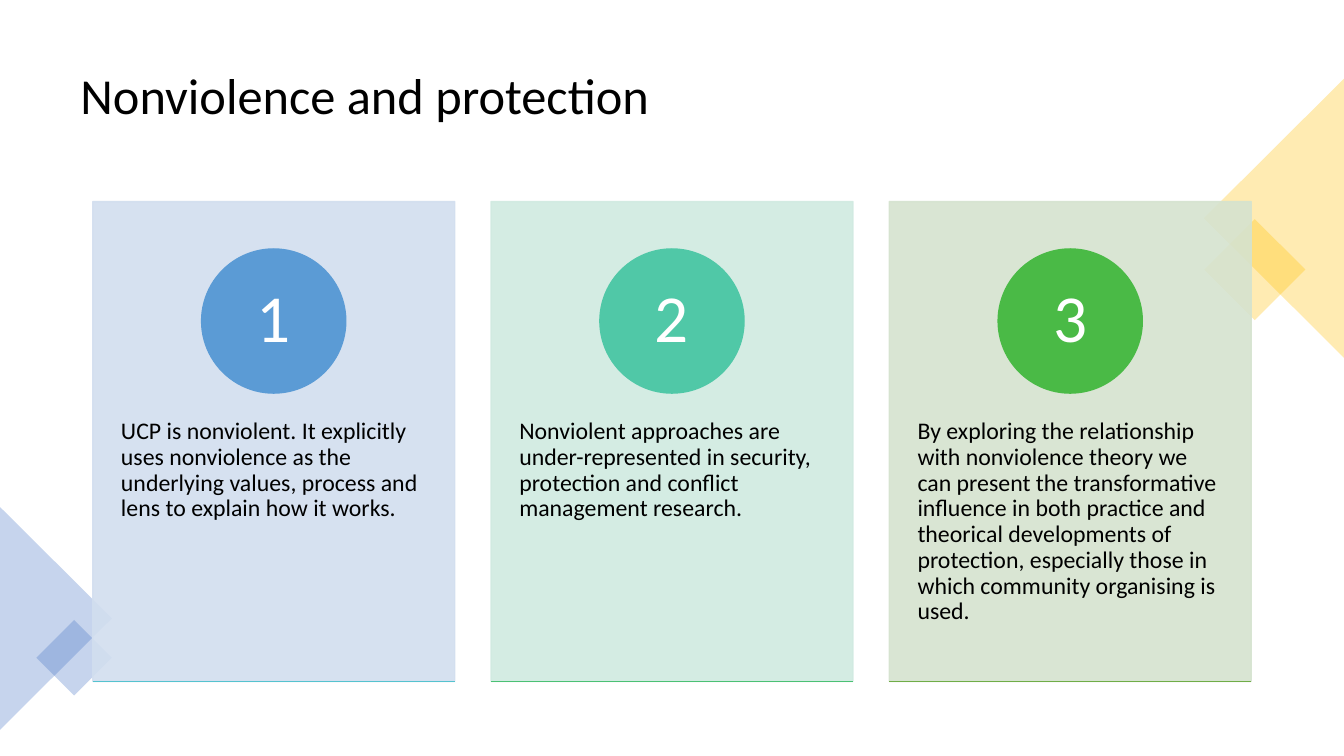
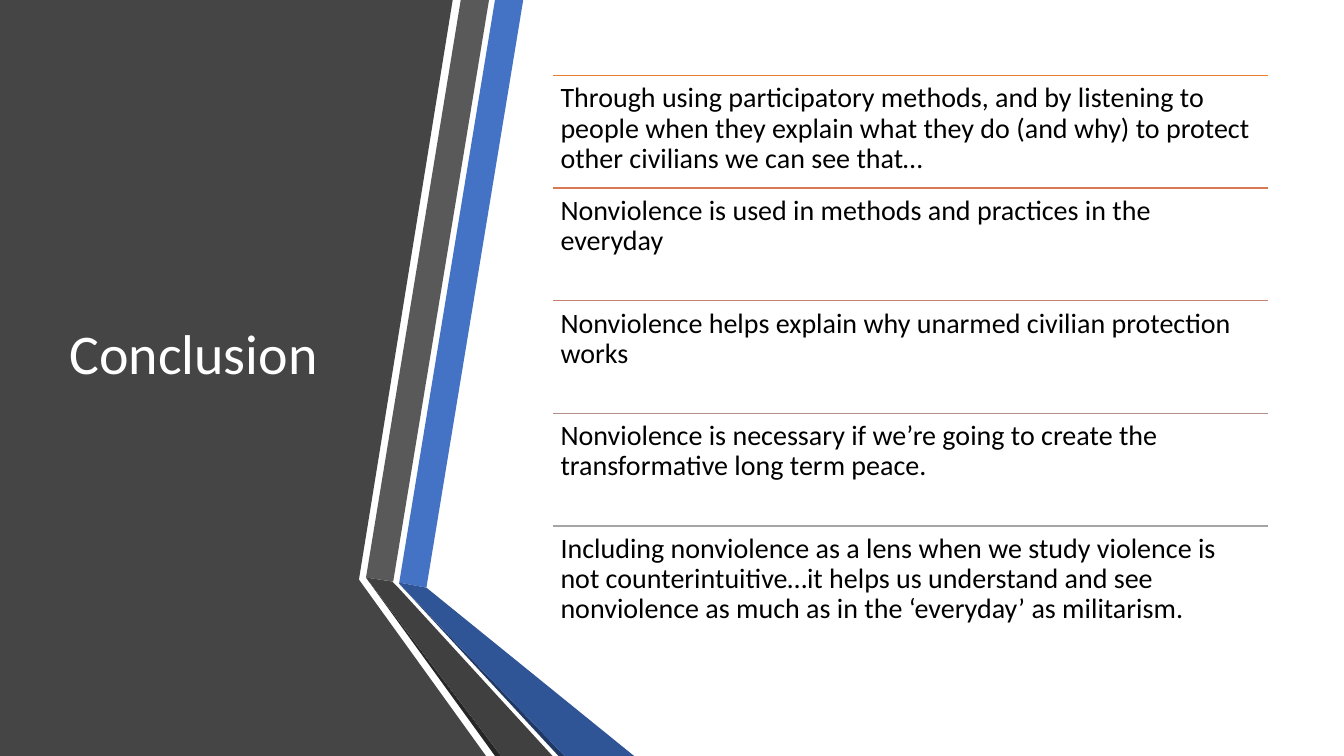
from typing import NamedTuple

from lxml import etree
from pptx import Presentation
from pptx.dml.color import RGBColor
from pptx.enum import shapes, text
from pptx.oxml.ns import qn
from pptx.util import Inches, Pt

# Shared style
FONT = "Calibri"
BLACK, WHITE = "000000", "FFFFFF"
BLUE, GOLD = "4472C4", "FFC000"
DIAMOND_OPACITY, CARD_OPACITY = 30, 90
SLIDE_WIDTH, SLIDE_HEIGHT = 13.33, 7.5
TITLE_INSETS = (0.1, 0.05)


class Accent(NamedTuple):
    kind: shapes.MSO_SHAPE
    left: float
    top: float
    width: float
    height: float
    rotation: int
    color: str


class Card(NamedTuple):
    background: str
    circle: str
    rule: str
    body: str


class Facet(NamedTuple):
    color: str
    points: list[tuple[float, float]]


class Statement(NamedTuple):
    rule: str
    body: str


# Content
ACCENTS = [
    Accent(shapes.MSO_SHAPE.RECTANGLE, 12.09, 2.32, 0.71, 0.71, 45, GOLD),
    Accent(shapes.MSO_SHAPE.ISOSCELES_TRIANGLE, 11.25, 1.47, 2.77, 1.39, 270, GOLD),
    Accent(shapes.MSO_SHAPE.ISOSCELES_TRIANGLE, -0.55, 5.58, 2.21, 1.11, 90, BLUE),
    Accent(shapes.MSO_SHAPE.RECTANGLE, 0.47, 6.26, 0.53, 0.53, 45, BLUE),
]

CARDS = [
    Card("D2DEEF", "5B9BD5", "55C3CF",
         "UCP is nonviolent. It explicitly uses nonviolence as the underlying "
         "values, process and lens to explain how it works."),
    Card("D0EAE1", "50C8A7", "4BC174",
         "Nonviolent approaches are under-represented in security, protection "
         "and conflict management research."),
    Card("D5E3CF", "4ABA46", "70AD47",
         "By exploring the relationship with nonviolence theory we can present "
         "the transformative influence in both practice and theorical "
         "developments of protection, especially those in which community "
         "organising is used."),
]

FACETS = [
    Facet("454545", [(0, 0), (4.49, 0), (3.56, 5.75), (4.82, 7.5), (0, 7.5)]),
    Facet(BLUE, [(3.96, 5.78), (4.23, 5.83), (5.19, 0), (4.91, 0)]),
    Facet("595959", [(4.85, 0), (4.57, 0), (3.63, 5.73), (3.9, 5.77)]),
    Facet("262626", [(3.63, 5.73), (4.91, 7.5), (4.97, 7.5)]),
    Facet("203864", [(3.96, 5.79), (5.54, 7.5), (5.6, 7.5)]),
    Facet("2F5597", [(3.96, 5.79), (5.6, 7.5), (6.29, 7.5), (4.23, 5.83), (3.96, 5.78)]),
    Facet("404040", [(5.48, 7.5), (3.95, 5.83), (3.89, 5.77), (3.63, 5.73), (4.97, 7.5)]),
]

STATEMENTS = [
    Statement("ED7D31",
              "Through using participatory methods, and by listening to people when "
              "they explain what they do (and why) to protect other civilians we can "
              "see that…"),
    Statement("D87A51", "Nonviolence is used in methods and practices in the everyday"),
    Statement("C48170", "Nonviolence helps explain why unarmed civilian protection works"),
    Statement("B4908B",
              "Nonviolence is necessary if we’re going to create the transformative "
              "long term peace."),
    Statement("A5A5A5",
              "Including nonviolence as a lens when we study violence is not "
              "counterintuitive…it helps us understand and see nonviolence as much as "
              "in the ‘everyday’ as militarism."),
]


# Drawing functions
def rgb(color: str) -> RGBColor:
    return RGBColor.from_string(color)


def paint(shape, color: str, outlined: bool = False, opacity: int = 100) -> None:
    shape.shadow.inherit = False
    shape.fill.solid()
    shape.fill.fore_color.rgb = rgb(color)
    if outlined:
        shape.line.color.rgb = rgb(color)
        shape.line.width = Pt(1)
    else:
        shape.line.fill.background()
    if opacity < 100:
        for node in shape.element.spPr.iter(qn("a:srgbClr")):
            etree.SubElement(node, qn("a:alpha"), val=str(opacity * 1000))


def add_preset(slide, kind, left: float, top: float, width: float, height: float,
               color: str, **style):
    shape = slide.shapes.add_shape(
        kind, Inches(left), Inches(top), Inches(width), Inches(height))
    paint(shape, color, **style)
    return shape


def add_facet(slide, facet: Facet) -> None:
    points = [(Inches(x), Inches(y)) for x, y in facet.points]
    builder = slide.shapes.build_freeform(*points[0])
    builder.add_line_segments(points[1:], close=True)
    paint(builder.convert_to_shape(), facet.color)


def add_rule(slide, left: float, top: float, width: float, color: str) -> None:
    rule = slide.shapes.add_connector(
        shapes.MSO_CONNECTOR.STRAIGHT,
        Inches(left), Inches(top), Inches(left + width), Inches(top))
    rule.line.color.rgb = rgb(color)
    rule.line.width = Pt(1)
    etree.SubElement(rule.element.spPr, qn("a:effectLst"))


def add_text(slide, words: str, left: float, top: float, width: float, height: float,
             *, size: float, color: str = BLACK,
             insets: tuple[float, float] = TITLE_INSETS,
             anchor=text.MSO_ANCHOR.TOP, align=text.PP_ALIGN.LEFT) -> None:
    box = slide.shapes.add_textbox(
        Inches(left), Inches(top), Inches(width), Inches(height))
    frame = box.text_frame
    frame.word_wrap = True
    frame.vertical_anchor = anchor
    frame.margin_left = frame.margin_right = Inches(insets[0])
    frame.margin_top = frame.margin_bottom = Inches(insets[1])
    paragraph = frame.paragraphs[0]
    paragraph.alignment = align
    paragraph.line_spacing = 0.9
    run = paragraph.add_run()
    run.text = words
    run.font.name = FONT
    run.font.size = Pt(size)
    run.font.color.rgb = rgb(color)


def add_title(slide, words: str, left: float, top: float, width: float, height: float,
              size: float, color: str) -> None:
    add_text(slide, words, left, top, width, height, size=size, color=color,
             anchor=text.MSO_ANCHOR.MIDDLE)


def add_card(slide, card: Card, number: int, left: float) -> None:
    top, width, height, diameter = 2, 3.59, 4.76, 1.43
    add_preset(slide, shapes.MSO_SHAPE.RECTANGLE, left, top, width, height,
               card.background, outlined=True, opacity=CARD_OPACITY)
    add_text(slide, card.body, left, 3.8, width, 2.86, size=17, insets=(0.28, 0.36))
    circle_left, circle_top = left + (width - diameter) / 2, 2.47
    add_preset(slide, shapes.MSO_SHAPE.OVAL, circle_left, circle_top,
               diameter, diameter, card.circle, outlined=True)
    add_text(slide, str(number), circle_left + 0.21, circle_top + 0.21, 1.01, 1.01,
             size=48, color=WHITE, insets=(0.11, 0.01),
             anchor=text.MSO_ANCHOR.MIDDLE, align=text.PP_ALIGN.CENTER)
    add_rule(slide, left, top + height, width, card.rule)


# Slides
def build_protection(slide) -> None:
    add_title(slide, "Nonviolence and protection", 0.7, 0.35, 11.93, 1.24, 36, BLACK)
    for accent in ACCENTS:
        shape = add_preset(slide, accent.kind, accent.left, accent.top, accent.width,
                           accent.height, accent.color, opacity=DIAMOND_OPACITY)
        shape.rotation = accent.rotation
    first_left, pitch = 0.92, 3.95
    for index, card in enumerate(CARDS):
        add_card(slide, card, index + 1, first_left + index * pitch)


def build_conclusion(slide) -> None:
    for facet in FACETS:
        add_facet(slide, facet)
    add_title(slide, "Conclusion", 0.59, 0.75, 3.04, 5.58, 40, WHITE)
    left, first_top, width, pitch = 5.48, 0.75, 7.1, 1.117
    for index, statement in enumerate(STATEMENTS):
        top = first_top + index * pitch
        add_rule(slide, left, top, width, statement.rule)
        add_text(slide, statement.body, left, top, width, pitch,
                 size=20, insets=(0.08, 0.08))


def main() -> None:
    presentation = Presentation()
    presentation.slide_width = Inches(SLIDE_WIDTH)
    presentation.slide_height = Inches(SLIDE_HEIGHT)
    blank = presentation.slide_layouts[6]
    for build in (build_protection, build_conclusion):
        build(presentation.slides.add_slide(blank))
    presentation.save("out.pptx")


if __name__ == "__main__":
    main()
